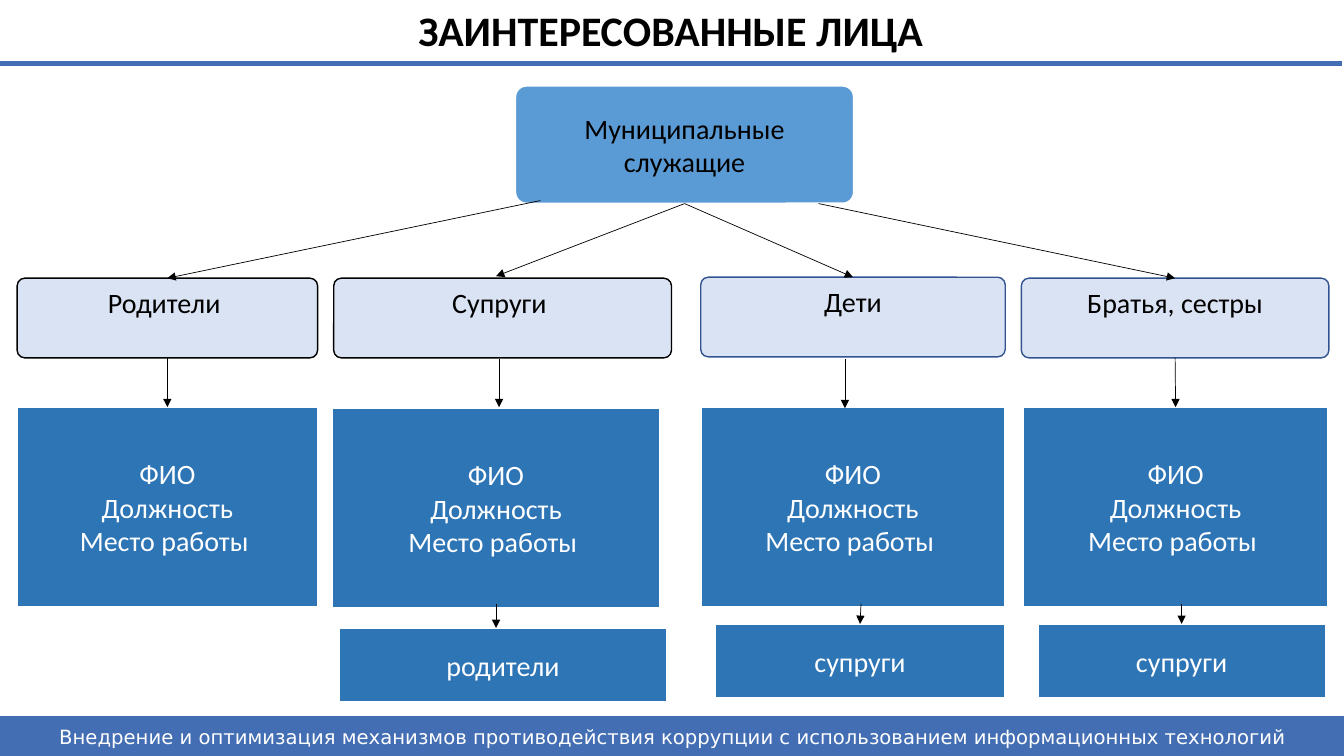
from lxml import etree
from pptx import Presentation
from pptx.dml.color import RGBColor
from pptx.enum.shapes import MSO_CONNECTOR, MSO_SHAPE
from pptx.enum.text import MSO_ANCHOR, PP_ALIGN
from pptx.oxml.ns import qn
from pptx.util import Inches, Pt

COLORS = {
    "black": "000000", "white": "FFFFFF", "band": "436EB3", "root": "5B9BD5",
    "relation": "DAE3F3", "navy": "325491", "details": "2E75B6",
}
COLORS = {name: RGBColor.from_string(value) for name, value in COLORS.items()}

prs = Presentation()
prs.slide_width, prs.slide_height = Inches(13.33), Inches(7.5)
s = prs.slides.add_slide(prs.slide_layouts[6])


def add_box(box, lines, fill, line, width=1.5, color="white", rounded=False,
            anchor=MSO_ANCHOR.MIDDLE, size=20, font="Calibri"):
    kind = MSO_SHAPE.ROUNDED_RECTANGLE if rounded else MSO_SHAPE.RECTANGLE
    sp = s.shapes.add_shape(kind, *map(Inches, box))
    if rounded:
        sp.adjustments[0] = 0.095
    sp.shadow.inherit = False
    sp.fill.solid()
    sp.fill.fore_color.rgb = COLORS[fill]
    sp.line.color.rgb = COLORS[line]
    sp.line.width = Pt(width)
    tf = sp.text_frame
    tf.word_wrap = True
    tf.vertical_anchor = anchor
    tf.text = "\n".join(lines)
    for p in tf.paragraphs:
        p.alignment = PP_ALIGN.CENTER
        p.font.name = font
        p.font.size = Pt(size)
        p.font.color.rgb = COLORS[color]
    return sp


def add_line(start, end, color="black", width=0.5, arrow=True, above=None, below=None):
    """Draw a line, joined to the bottom of `above` and the top of `below` if given."""
    c = s.shapes.add_connector(MSO_CONNECTOR.STRAIGHT, *map(Inches, (*start, *end)))
    if above is not None:
        c.begin_connect(above, 2)
    if below is not None:
        c.end_connect(below, 0)
    c.line.color.rgb = COLORS[color]
    c.line.width = Pt(width)
    if arrow:
        etree.SubElement(c.line._get_or_add_ln(), qn("a:tailEnd"), type="triangle")
    etree.SubElement(c._element.spPr, qn("a:effectLst"))


# Title and footer
add_line((0, 0.63), (13.31, 0.63), "band", 3, arrow=False)
title = s.shapes.add_textbox(0, 0, Inches(13.31), Inches(0.61))
tf = title.text_frame
tf.word_wrap = True
tf.text = "ЗАИНТЕРЕСОВАННЫЕ ЛИЦА"
p = tf.paragraphs[0]
p.alignment = PP_ALIGN.CENTER
p.font.name = "Calibri"
p.font.size = Pt(30)
p.font.bold = True
p.font.color.rgb = COLORS["black"]

footer = add_box(
    (0, 7.11, 13.35, 0.39),
    ["Внедрение и оптимизация механизмов противодействия коррупции "
     "с использованием информационных технологий"],
    "band", "band", width=1, size=14, font="DejaVu Sans")
footer.text_frame.paragraphs[0].space_after = Pt(4)

# Boxes: label, outline, (left, top, width) of the relation and of its details
root = add_box((5.11, 0.85, 3.36, 1.17), ["Муниципальные служащие"],
               "root", "white", color="black", rounded=True)
columns = [
    ("Родители ", "black", (0.17, 2.76, 2.98), (0.17, 4.04, 2.98)),
    ("Супруги ", "black", (3.31, 2.76, 3.35), (3.29, 4.05, 3.26)),
    ("Дети", "navy", (6.95, 2.75, 3.02), (6.95, 4.04, 3.02)),
    ("Братья, сестры", "navy", (10.13, 2.76, 3.05), (10.15, 4.04, 3.02)),
]
relations, details = [], []
for label, outline, relation, detail in columns:
    relations.append(add_box((*relation, 0.79), [label], "relation", outline, width=1,
                             color="black", rounded=True, anchor=MSO_ANCHOR.TOP))
    details.append(add_box((*detail, 1.98), ["ФИО", "Должность", "Место работы "],
                           "details", "white"))

in_laws = [
    add_box((*place, 0.74), [label], "details", "white")
    for label, place in [("родители", (3.36, 6.23, 3.26)),
                         ("супруги", (7.09, 6.19, 2.88)),
                         ("супруги", (10.29, 6.19, 2.86))]
]

# Arrows
parents, spouses, children, siblings = relations
arrows = [
    ((5.36, 1.99), (1.66, 2.76), None, parents),
    ((6.79, 2.02), (4.92, 2.74), root, None),
    ((6.79, 2.02), (8.46, 2.75), root, children),
    ((8.12, 2.02), (11.65, 2.76), None, siblings),
    ((1.66, 3.55), (1.66, 4.04), parents, details[0]),
    ((4.95, 3.56), (4.95, 4.04), None, None),
    ((8.38, 3.56), (8.38, 4.05), None, None),
    ((11.65, 3.55), (11.66, 4.04), siblings, details[3]),
    ((4.92, 5.99), (4.92, 6.23), None, None),
    ((8.54, 5.99), (8.53, 6.19), None, in_laws[1]),
    ((11.72, 5.99), (11.72, 6.19), None, in_laws[2]),
]
for start, end, above, below in arrows:
    add_line(start, end, above=above, below=below)

prs.save("out.pptx")
